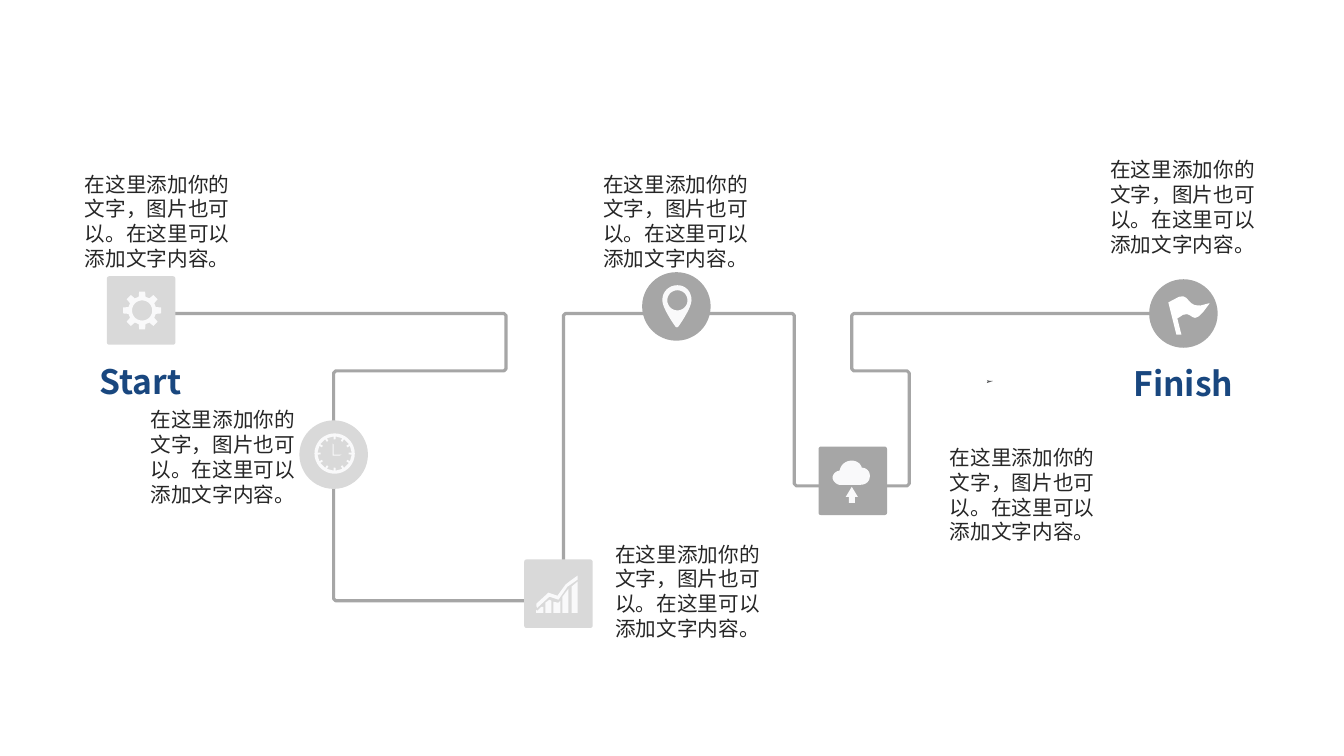
from math import cos, radians, sin

from lxml.etree import SubElement
from pptx import Presentation
from pptx.dml.color import RGBColor
from pptx.enum.shapes import MSO_SHAPE as Preset
from pptx.enum.text import MSO_AUTO_SIZE as AutoSize, PP_ALIGN as Align
from pptx.oxml.ns import qn
from pptx.util import Cm, Pt

COLORS = {"road": "A6A6A6", "early": "D9D9D9", "late": "A6A6A6", "icon": "F9F9FA",
          "flag": "FFFFFF", "label": "19477F", "text": "262626", "mark": "595A5C"}
FONT = "Noto Sans CJK SC"
BADGE = 0.68
CALLOUT = "在这里添加你的文字，图片也可以。在这里可以添加文字内容。"


def inch(value):
    return Cm(value * 2.54)


def polar(center, radius, degrees):
    angle = radians(degrees)
    return center[0] + radius * cos(angle), center[1] + radius * sin(angle)


def circle(center, radius):
    return [polar(center, radius, step * 10) for step in range(36)]


def toothed(center, root, tip, count, root_half, tip_half):
    corners = ((root, -root_half), (tip, -tip_half), (tip, tip_half), (root, root_half))
    return [polar(center, radius, tooth * 360 / count + offset)
            for tooth in range(count) for radius, offset in corners]


def curve(start, *segments):
    points = [start]
    for segment in segments:
        if len(segment) == 2:
            points.append(segment)
            continue
        controls = [points[-1], segment[:2], segment[2:4], segment[4:]]
        for step in range(1, 9):
            t = step / 8
            weights = ((1 - t) ** 3, 3 * t * (1 - t) ** 2, 3 * t * t * (1 - t), t ** 3)
            points.append(tuple(sum(weight * control[axis] for weight, control
                                    in zip(weights, controls)) for axis in (0, 1)))
    return points


def clipped(corners, cut):
    def toward(corner, other):
        return tuple(a + max(-cut, min(cut, b - a)) for a, b in zip(corner, other))

    points = [corners[0]]
    for before, corner, after in zip(corners, corners[1:], corners[2:]):
        points += [toward(corner, before), toward(corner, after)]
    return points + [corners[-1]]


class Roadmap:
    def __init__(self, deck):
        self.page = deck.slides.add_slide(deck.slide_layouts[6])
        self.ungroup()

    def group(self):
        self.shapes = self.page.shapes.add_group_shape().shapes

    def ungroup(self):
        self.shapes = self.page.shapes

    def paint(self, shape, color):
        shape.shadow.inherit = False
        shape.fill.solid()
        shape.fill.fore_color.rgb = RGBColor.from_string(COLORS[color])
        shape.line.fill.background()

    def outline(self, contours, closed=True):
        scaled = [[(inch(x), inch(y)) for x, y in points] for points in contours]
        builder = self.shapes.build_freeform(*scaled[0][0], scale=1.0)
        for index, points in enumerate(scaled):
            if index:
                builder.move_to(*points[0])
            builder.add_line_segments(points[1:], close=closed)
        return builder.convert_to_shape()

    def icon(self, *contours, color="icon"):
        self.paint(self.outline(contours), color)

    def preset(self, kind, color, left, top, width, height, adjustments=()):
        shape = self.shapes.add_shape(kind, inch(left), inch(top), inch(width), inch(height))
        for index, value in enumerate(adjustments):
            shape.adjustments[index] = value
        self.paint(shape, color)

    def square(self, color, left, top):
        self.group()
        self.preset(Preset.ROUNDED_RECTANGLE, color, left, top, BADGE, BADGE, [0.035])

    def disc(self, color, left, top):
        self.group()
        self.preset(Preset.OVAL, color, left, top, BADGE, BADGE)

    def road(self, corners):
        shape = self.outline([clipped(corners, 0.02)], closed=False)
        shape.shadow.inherit = False
        shape.fill.background()
        shape.line.color.rgb = RGBColor.from_string(COLORS["road"])
        shape.line.width = Pt(2.25)

    def text(self, content, left, top, width, height, size, color, bold=False):
        box = self.shapes.add_textbox(inch(left), inch(top), inch(width), inch(height))
        frame = box.text_frame
        frame.text = content
        frame.word_wrap = not bold
        frame.auto_size = AutoSize.SHAPE_TO_FIT_TEXT
        if bold:
            frame.margin_left = frame.margin_right = inch(0.2)
            frame.margin_top = frame.margin_bottom = inch(0.1)
        para = frame.paragraphs[0]
        para.alignment = Align.CENTER
        para.line_spacing = Pt(round(size * 1.21, 1))
        span = para.runs[0]
        span.font.size = Pt(size)
        span.font.bold = bold
        span.font.color.rgb = RGBColor.from_string(COLORS[color])
        span.font.name = FONT
        SubElement(span.font._element, qn("a:ea")).set("typeface", FONT)

    def label(self, content, left, top, width):
        self.text(content, left, top, width, 0.61, 24, "label", bold=True)

    def callout(self, left, top):
        self.text(CALLOUT, left, top, 1.72, 1.09, 14.7, "text")


def main():
    deck = Presentation()
    deck.slide_width, deck.slide_height = inch(13.333), inch(7.5)
    roadmap = Roadmap(deck)

    roadmap.road([(1.6, 3.11), (5.02, 3.11), (5.02, 3.68), (3.31, 3.68), (3.31, 5.96),
                  (5.59, 5.96), (5.59, 3.11), (7.88, 3.11), (7.88, 4.82), (9.02, 4.82),
                  (9.02, 3.68), (8.45, 3.68), (8.45, 3.11), (11.81, 3.11)])
    roadmap.icon([(9.79, 3.77), (9.82, 3.78), (9.85, 3.78), (9.82, 3.79), (9.79, 3.8),
                  (9.8, 3.78)], color="mark")

    roadmap.square("late", 8.12, 4.43)
    roadmap.icon(curve((8.55, 4.64), (8.54, 4.6, 8.5, 4.57, 8.45, 4.57),
                       (8.39, 4.57, 8.34, 4.61, 8.33, 4.67),
                       (8.3, 4.67, 8.26, 4.7, 8.26, 4.74),
                       (8.26, 4.77, 8.3, 4.81, 8.33, 4.81), (8.53, 4.81),
                       (8.6, 4.81, 8.63, 4.77, 8.63, 4.72),
                       (8.63, 4.68, 8.6, 4.64, 8.55, 4.64)))
    roadmap.preset(Preset.UP_ARROW, "icon", 8.39, 4.83, 0.12, 0.16, [0.5, 0.83])

    roadmap.disc("late", 6.37, 2.7)
    roadmap.icon(curve((6.72, 2.83), (6.64, 2.83, 6.57, 2.89, 6.57, 2.98),
                       (6.57, 3.06, 6.7, 3.24, 6.7, 3.24),
                       (6.71, 3.25, 6.72, 3.25, 6.73, 3.24),
                       (6.73, 3.24, 6.86, 3.06, 6.86, 2.98),
                       (6.86, 2.89, 6.8, 2.83, 6.72, 2.83)),
                 circle((6.72, 2.98), 0.1))

    roadmap.disc("early", 2.97, 4.17)
    dial = (3.32, 4.5)
    roadmap.icon(circle(dial, 0.2), toothed(dial, 0.17, 0.14, 12, 3.5, 3.5))
    roadmap.icon([(3.3, 4.4), (3.31, 4.41), (3.31, 4.51), (3.39, 4.51), (3.37, 4.52),
                  (3.3, 4.52)])

    roadmap.square("early", 5.2, 5.55)
    base = 6.08
    bar_tops = [
        [(5.32, 6.05), (5.33, 6.06), (5.37, 6.02), (5.39, 6.02)],
        [(5.41, 5.98), (5.45, 5.95), (5.47, 5.96)],
        [(5.49, 5.97), (5.54, 5.98), (5.56, 5.96)],
        [(5.58, 5.92), (5.64, 5.84)],
        [(5.67, 5.82), (5.73, 5.77)],
    ]
    for top in bar_tops:
        roadmap.icon([*top, (top[-1][0], base), (top[0][0], base)])
    roadmap.icon([(5.66, 5.76), (5.61, 5.8), (5.53, 5.91), (5.44, 5.88), (5.32, 5.99),
                  (5.32, 6.01), (5.33, 6.03), (5.45, 5.92), (5.54, 5.95), (5.63, 5.82),
                  (5.66, 5.8), (5.73, 5.75), (5.73, 5.71)])

    roadmap.square("early", 1.06, 2.74)
    hub = (1.41, 3.08)
    roadmap.icon(toothed(hub, 0.14, 0.19, 8, 14, 9), circle(hub, 0.1))
    roadmap.label("Start", 0.77, 3.48, 1.25)

    roadmap.disc("late", 11.4, 2.77)
    roadmap.icon(curve((11.99, 3.01), (11.73, 3.11, 11.84, 2.84, 11.63, 2.98),
                       (11.59, 3), (11.67, 3.32), (11.72, 3.32), (11.68, 3.16),
                       (11.86, 3.01, 11.79, 3.32, 12, 3.01)), color="flag")
    roadmap.label("Finish", 11.03, 3.5, 1.42)

    roadmap.ungroup()
    for left, top in ((5.84, 1.65), (1.35, 3.99), (5.96, 5.32), (0.7, 1.65),
                      (9.28, 4.36), (10.87, 1.51)):
        roadmap.callout(left, top)
    deck.save("out.pptx")


if __name__ == "__main__":
    main()
